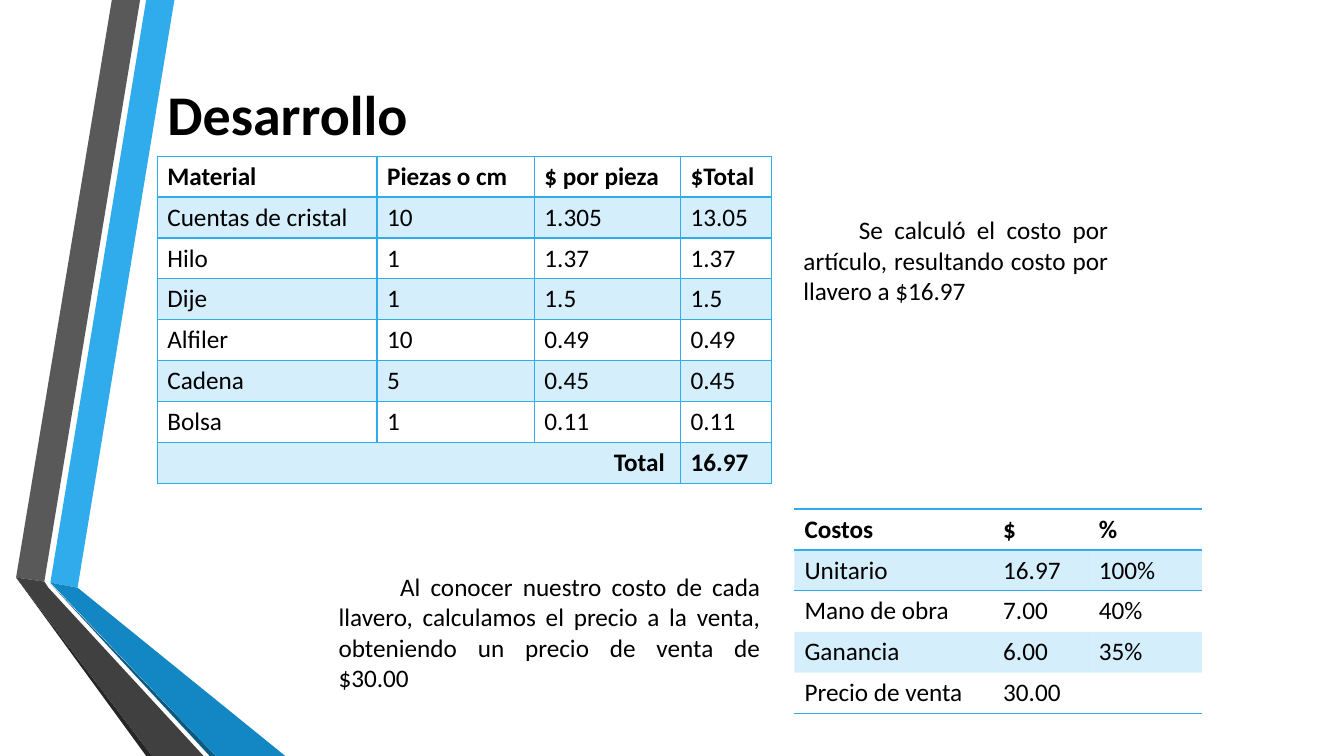
"""Build the Desarrollo slide with its two cost tables."""
from lxml import etree
from pptx import Presentation
from pptx import util as u
from pptx.dml.color import RGBColor
from pptx.enum import text
from pptx.oxml.ns import qn

PX = 9144
FONT = "Calibri"
BLACK = RGBColor(0x00, 0x00, 0x00)
BLUE = RGBColor(0x30, 0xAC, 0xEC)
DEEP_BLUE = RGBColor(0x12, 0x87, 0xC3)
NAVY = RGBColor(0x0C, 0x5A, 0x82)
GRAY = RGBColor(0x59, 0x59, 0x59)
DARK_GRAY = RGBColor(0x40, 0x40, 0x40)
CHARCOAL = RGBColor(0x26, 0x26, 0x26)
NO_TABLE_STYLE = "{2D5ABB26-0587-4C30-8999-92F81FD0307C}"

RIBBONS = [
    (BLUE, [(50, 578), (77, 583), (173, 0), (145, 0)]),
    (GRAY, [(139, 0), (111, 0), (16, 573), (44, 577)]),
    (CHARCOAL, [(16, 573), (145, 750), (151, 750)]),
    (NAVY, [(50, 579), (208, 750), (214, 750)]),
    (DEEP_BLUE, [(50, 578), (214, 750), (283, 750), (77, 583)]),
    (DARK_GRAY, [(202, 750), (48, 583), (44, 577), (16, 573), (151, 750)]),
]
MATERIALS = [
    ("Material", "Piezas o cm", "$ por pieza", "$Total"),
    ("Cuentas de cristal", "10", "1.305", "13.05"),
    ("Hilo", "1", "1.37", "1.37"),
    ("Dije", "1", "1.5", "1.5"),
    ("Alfiler", "10", "0.49", "0.49"),
    ("Cadena", "5", "0.45", "0.45"),
    ("Bolsa", "1", "0.11", "0.11"),
    ("Total ", "", "", "16.97"),
]
COSTS = [
    ("Costos", "$", "%"),
    ("Unitario", "16.97", "100%"),
    ("Mano de obra", "7.00", "40%"),
    ("Ganancia", "6.00", "35%"),
    ("Precio de venta", "30.00", ""),
]


def to_emu(*lengths):
    """Turn px lengths into EMU."""
    return [u.Emu(length * PX) for length in lengths]


def format_paragraph(paragraph, size=18, bold=False, align=None):
    """Set the alignment and the font of every run."""
    paragraph.alignment = align
    for run in paragraph.runs:
        run.font.name = FONT
        run.font.size = u.Pt(size)
        run.font.bold = bold
        run.font.color.rgb = BLACK


def add_ribbons(slide):
    """Draw the folded ribbons at the left edge."""
    group = slide.shapes.add_group_shape()
    for color, points in RIBBONS:
        builder = group.shapes.build_freeform(*points[0], scale=PX)
        builder.add_line_segments(points[1:], close=True)
        shape = builder.convert_to_shape()
        shape.shadow.inherit = False
        shape.fill.solid()
        shape.fill.fore_color.rgb = color
        shape.line.fill.background()


def set_title(slide, wording):
    """Place the title above the ribbons."""
    title = slide.shapes.title
    title.element.getparent().append(title.element)
    title.left, title.top, title.width, title.height = to_emu(156, 16, 1096, 192)
    title.text_frame.text = wording
    title.text_frame.vertical_anchor = text.MSO_ANCHOR.MIDDLE
    format_paragraph(title.text_frame.paragraphs[0], 40, True, text.PP_ALIGN.JUSTIFY)


def add_note(slide, wording, box, indent):
    """Add a justified paragraph with a first-line indent."""
    frame = slide.shapes.add_textbox(*to_emu(*box)).text_frame
    frame.word_wrap = True
    frame.text = wording
    paragraph = frame.paragraphs[0]
    format_paragraph(paragraph, align=text.PP_ALIGN.JUSTIFY)
    paragraph._p.get_or_add_pPr().set("indent", str(indent * PX))


def set_borders(cell, widths):
    """Draw the given sides, with widths in points."""
    properties = cell._tc.get_or_add_tcPr()
    for side in "LRTB":
        if side in widths:
            line = etree.SubElement(properties, qn(f"a:ln{side}"), w=str(u.Pt(widths[side])))
            fill = etree.SubElement(line, qn("a:solidFill"))
            etree.SubElement(fill, qn("a:srgbClr"), val=str(BLUE))


def set_band(cell, shaded):
    """Fill a cell with translucent blue or leave it clear."""
    if not shaded:
        cell.fill.background()
        return
    cell.fill.solid()
    cell.fill.fore_color.rgb = BLUE
    color = cell._tc.tcPr.find(qn("a:solidFill"))[0]
    etree.SubElement(color, qn("a:alpha"), val="20000")


def grid_borders(row, last):
    """Return a full grid with a thick line under the header."""
    return {"L": 1, "R": 1, "T": 2 if row == 1 else 1, "B": 2 if row == 0 else 1}


def rule_borders(row, last):
    """Return rules around the header and below the last row."""
    if row == 0:
        return {"T": 1, "B": 1}
    if row == 1:
        return {"T": 1}
    return {"B": 1} if row == last else {}


def add_cost_table(slide, rows, box, widths, borders):
    """Add a banded table with a bold header."""
    table = slide.shapes.add_table(len(rows), len(widths), *to_emu(*box)).table
    table._tbl.tblPr.find(qn("a:tableStyleId")).text = NO_TABLE_STYLE
    for column, width in zip(table.columns, to_emu(*widths)):
        column.width = width
    for row, values in enumerate(rows):
        for column, value in enumerate(values):
            cell = table.cell(row, column)
            cell.text_frame.text = value
            format_paragraph(cell.text_frame.paragraphs[0], bold=row == 0)
            set_borders(cell, borders(row, len(rows) - 1))
            set_band(cell, row % 2 == 1)
    return table


def format_total(table):
    """Merge the label cells of the last row and make it bold."""
    row = len(table.rows) - 1
    label, amount = table.cell(row, 0), table.cell(row, 3)
    label.merge(table.cell(row, 2))
    format_paragraph(label.text_frame.paragraphs[0], bold=True, align=text.PP_ALIGN.RIGHT)
    format_paragraph(amount.text_frame.paragraphs[0], bold=True)


def main():
    """Build and save the presentation."""
    presentation = Presentation()
    presentation.slide_width, presentation.slide_height = to_emu(1333, 750)
    slide = presentation.slides.add_slide(presentation.slide_layouts[5])
    add_ribbons(slide)
    set_title(slide, "Desarrollo")
    materials = add_cost_table(
        slide, MATERIALS, (156, 155, 609, 324), (218, 156, 145, 90), grid_borders)
    format_total(materials)
    add_note(slide, "Se calculó el costo por artículo, resultando costo por llavero a $16.97",
             (787, 208, 322, 101), 55)
    add_cost_table(slide, COSTS, (788, 505, 404, 203), (197, 95, 112), rule_borders)
    add_note(slide, "Al conocer nuestro costo de cada llavero, calculamos el precio a la venta, "
             "obteniendo un precio de venta de $30.00", (326, 562, 438, 131), 61)
    presentation.save("out.pptx")


if __name__ == "__main__":
    main()
